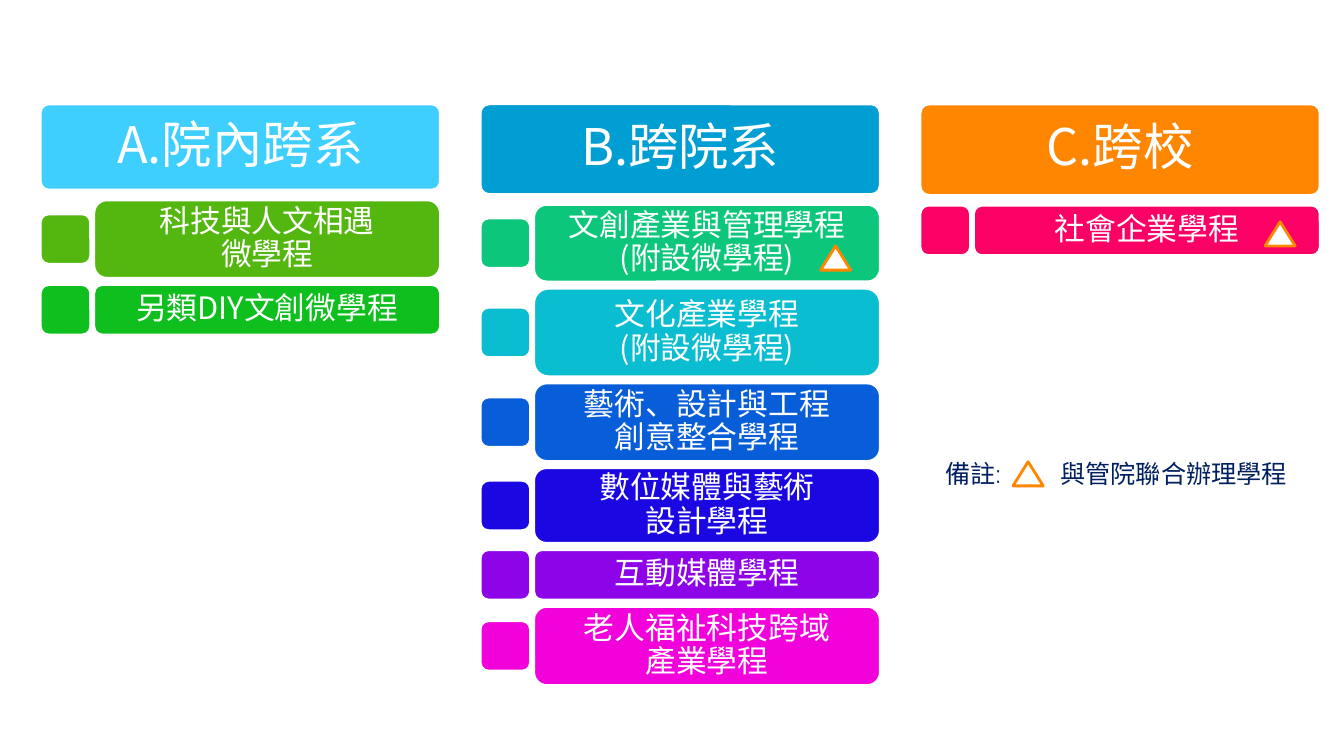
from pptx import Presentation
from pptx.dml.color import RGBColor
from pptx.enum import shapes, text
from pptx.oxml.ns import qn
from pptx.util import Pt
from lxml import etree

C = {
    "white": "FFFFFF", "navy": "002060", "orange": "FF8600",
    "sky": "3ECFFF", "blue": "009ED3", "olive": "54B70F", "green": "0EBF1E",
    "mint": "0CC77B", "cyan": "0ABDD0", "azure": "085DD8", "indigo": "1B07E1",
    "violet": "8D04E9", "magenta": "F202DB", "pink": "FB0065",
}
FONT = "Noto Sans CJK SC"

prs = Presentation()
prs.slide_width, prs.slide_height = Pt(960), Pt(540)
s = prs.slides.add_slide(prs.slide_layouts[6])


def add_box(kind, x, y, w, h, fill, line="white", adj=None):
    sp = s.shapes.add_shape(kind, Pt(x), Pt(y), Pt(w), Pt(h))
    sp.shadow.inherit = False
    sp.fill.solid()
    sp.fill.fore_color.rgb = RGBColor.from_string(C[fill])
    sp.line.color.rgb = RGBColor.from_string(C[line])
    sp.line.width = Pt(2)
    if adj is not None:
        sp.adjustments[0] = adj
    return sp


def write_lines(sp, lines, size, inset):
    tf = sp.text_frame
    tf.word_wrap = True
    tf.vertical_anchor = text.MSO_ANCHOR.MIDDLE
    tf.margin_left = tf.margin_right = Pt(inset)
    tf.margin_top = tf.margin_bottom = 0
    for i, line in enumerate(lines):
        p = tf.paragraphs[0] if i == 0 else tf.add_paragraph()
        p.alignment = text.PP_ALIGN.CENTER
        p.line_spacing = 0.9
        r = p.add_run()
        r.text = line
        r.font.size = Pt(size)
        r.font.name = FONT
        r.font.color.rgb = RGBColor.from_string(C["white"])
        etree.SubElement(r.font._element, qn("a:ea")).set("typeface", FONT)


# Columns: title, colour, header height, rows of (colour, height, lines)
columns = [
    ("A.院內跨系", "sky", 61.6, [
        ("olive", 56, ["科技與人文相遇", "微學程"]),
        ("green", 36, ["另類DIY文創微學程"]),
    ]),
    ("B.跨院系", "blue", 64.8, [
        ("mint", 55.4, ["文創產業與管理學程(附設微學程)"]),
        ("cyan", 63.2, ["文化產業學程", "(附設微學程)"]),
        ("azure", 56, ["藝術、設計與工程", "創意整合學程"]),
        ("indigo", 54, ["數位媒體與藝術", "設計學程"]),
        ("violet", 36, ["互動媒體學程"]),
        ("magenta", 56.6, ["老人福祉科技跨域", "產業學程"]),
    ]),
    ("C.跨校", "orange", 65.4, [
        ("pink", 36, ["社會企業學程"]),
    ]),
]
LEFT, TOP, STEP, WIDTH = 28.8, 74.2, 314.2, 285.8
SQUARE, INDENT, HEADER_GAP, ROW_GAP = 36, 38.2, 7, 4.5
ROUND = shapes.MSO_SHAPE.ROUNDED_RECTANGLE

for i, (title, colour, header_h, rows) in enumerate(columns):
    x = LEFT + i * STEP
    header = add_box(ROUND, x, TOP, WIDTH, header_h, colour, adj=0.1)
    write_lines(header, [title], 36, 5)
    y = TOP + header_h + HEADER_GAP
    for colour, h, lines in rows:
        add_box(ROUND, x, y + (h - SQUARE) / 2, SQUARE, SQUARE, colour, adj=0.167)
        bar = add_box(ROUND, x + INDENT, y, WIDTH - INDENT, h, colour, adj=0.167)
        write_lines(bar, lines, 22, 12)
        y += h + ROW_GAP

# Note, with a tab stop leaving room for its triangle
note = s.shapes.add_textbox(Pt(668.2), Pt(324), Pt(291.6), Pt(29))
tf = note.text_frame
tf.word_wrap = True
p = tf.paragraphs[0]
tabs = etree.SubElement(p._p.get_or_add_pPr(), qn("a:tabLst"))
tab = etree.SubElement(tabs, qn("a:tab"))
tab.set("pos", str(Pt(82)))
tab.set("algn", "l")
r = p.add_run()
r.text = "備註:\t與管院聯合辦理學程"
r.font.size = Pt(18)
r.font.name = "Quicksand"
r.font.color.rgb = RGBColor.from_string(C["navy"])

# Triangles marking joint programmes
for x, y in [(586.1, 175.7), (903.6, 158.4), (723.6, 329.8)]:
    add_box(shapes.MSO_SHAPE.ISOSCELES_TRIANGLE, x, y, 21.6, 17.3, "white", "orange")

prs.save("out.pptx")
